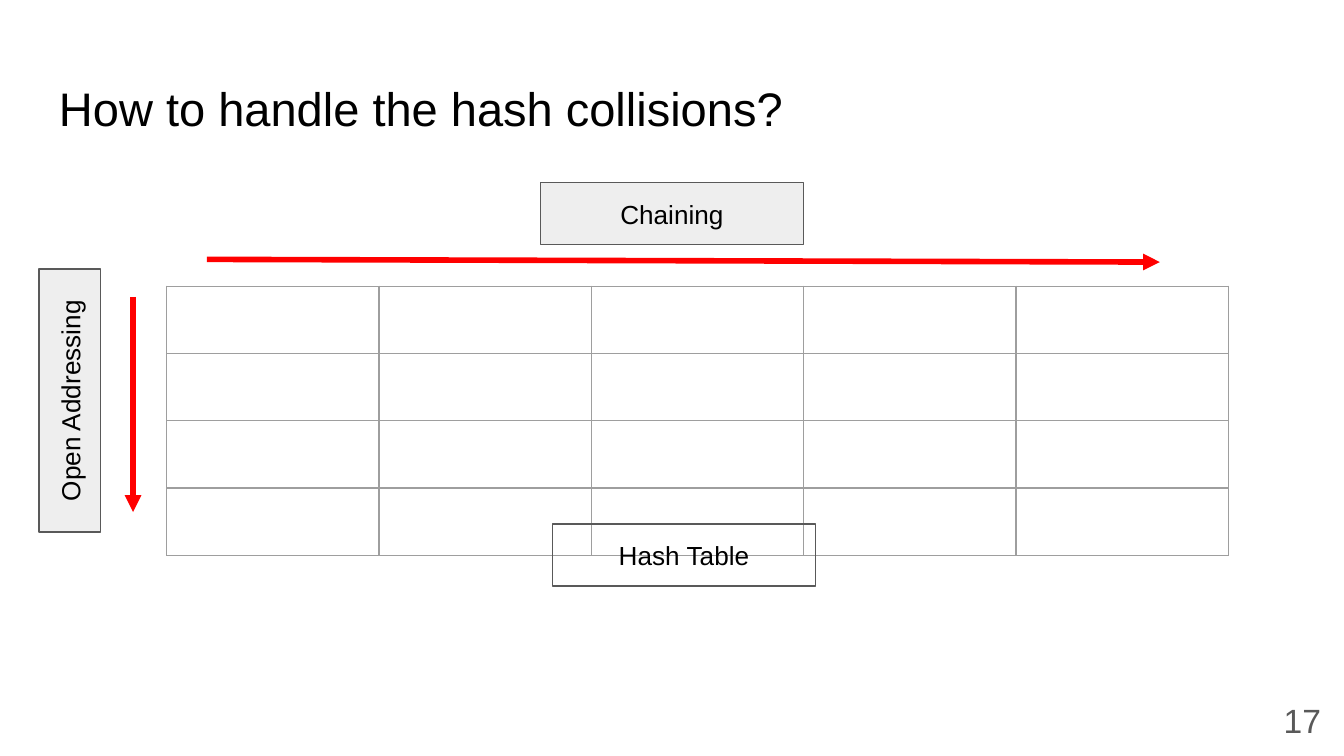
import pptx
import pptx.util
import pptx.dml.color
import pptx.enum.shapes
import pptx.enum.text
import pptx.oxml
import pptx.oxml.ns
from lxml import etree

Inches = pptx.util.Inches
Pt = pptx.util.Pt
qn = pptx.oxml.ns.qn
rgb = pptx.dml.color.RGBColor.from_string
align = pptx.enum.text.PP_ALIGN
anchor = pptx.enum.text.MSO_ANCHOR
COLORS = {"ink": "000000", "edge": "595959", "pale": "EEEEEE",
          "red": "FF0000", "grid": "9E9E9E"}

deck = pptx.Presentation()
deck.slide_width, deck.slide_height = Inches(10), Inches(10 * 9 / 16)
slide = deck.slides.add_slide(deck.slide_layouts[6])
shapes = slide.shapes


def write(shape, text, size=14, color="ink", side=align.CENTER, mid=anchor.MIDDLE):
    frame = shape.text_frame
    frame.word_wrap = True
    frame.vertical_anchor = mid
    frame.margin_left = frame.margin_right = Inches(0.1)
    frame.margin_top = frame.margin_bottom = Inches(0.1)
    para = frame.paragraphs[0]
    para.alignment = side
    run = para.add_run()
    run.text = text
    run.font.name = "Arial"
    run.font.size = Pt(size)
    run.font.color.rgb = rgb(COLORS[color])


title = shapes.add_textbox(Inches(0.34), Inches(0.49), Inches(9.32), Inches(0.63))
write(title, "How to handle the hash collisions?", size=25.2,
      side=align.LEFT, mid=anchor.TOP)

rows, cols = 4, 5
wide, high = 1.58, 0.42
frame = shapes.add_table(rows, cols, Inches(1.24), Inches(2.13),
                         Inches(cols * wide), Inches(rows * high))
table = frame.table
table.first_row = table.horz_banding = False
for col in table.columns:
    col.width = Inches(wide)
for row in table.rows:
    row.height = Inches(high)
for cell in table.iter_cells():
    cell.margin_left = cell.margin_right = Inches(0.1)
    cell.margin_top = cell.margin_bottom = Inches(0.1)
    blank = etree.SubElement(cell.text_frame.paragraphs[0]._p,
                             qn("a:endParaRPr"), sz="1800")
    etree.SubElement(blank, qn("a:latin"), typeface="Arial")
    props = cell._tc.get_or_add_tcPr()
    for edge in ("a:lnL", "a:lnR", "a:lnT", "a:lnB"):
        line = etree.SubElement(props, qn(edge), w=str(Pt(0.75)))
        paint = etree.SubElement(line, qn("a:solidFill"))
        etree.SubElement(paint, qn("a:srgbClr"), val=COLORS["grid"])
    cell.fill.background()

for x1, y1, x2, y2 in [(1.54, 1.93, 8.63, 1.95), (0.99, 2.21, 0.99, 3.81)]:
    arrow = shapes.add_connector(pptx.enum.shapes.MSO_CONNECTOR.STRAIGHT,
                                 Inches(x1), Inches(y1), Inches(x2), Inches(y2))
    arrow.line.color.rgb = rgb(COLORS["red"])
    arrow.line.width = Pt(3)
    etree.SubElement(arrow.line._get_or_add_ln(), qn("a:tailEnd"), type="triangle")
    etree.SubElement(arrow._element.spPr, qn("a:effectLst"))

for text, left, top, turn, fill in [("Hash Table", 4.11, 3.9, 0, None),
                                    ("Chaining", 4.02, 1.36, 0, "pale"),
                                    ("Open Addressing", -0.46, 2.75, 270, "pale")]:
    box = shapes.add_shape(pptx.enum.shapes.MSO_SHAPE.RECTANGLE,
                           Inches(left), Inches(top), Inches(1.96), Inches(0.46))
    box.rotation = turn
    box.shadow.inherit = False
    if fill:
        box.fill.solid()
        box.fill.fore_color.rgb = rgb(COLORS[fill])
    else:
        box.fill.background()
    box.line.color.rgb = rgb(COLORS["edge"])
    box.line.width = Pt(0.75)
    write(box, text)

page = shapes.add_textbox(Inches(9.42), Inches(5.11), Inches(0.54), Inches(0.5))
write(page, "17", size=18, color="edge", mid=anchor.TOP)

deck.save("out.pptx")
